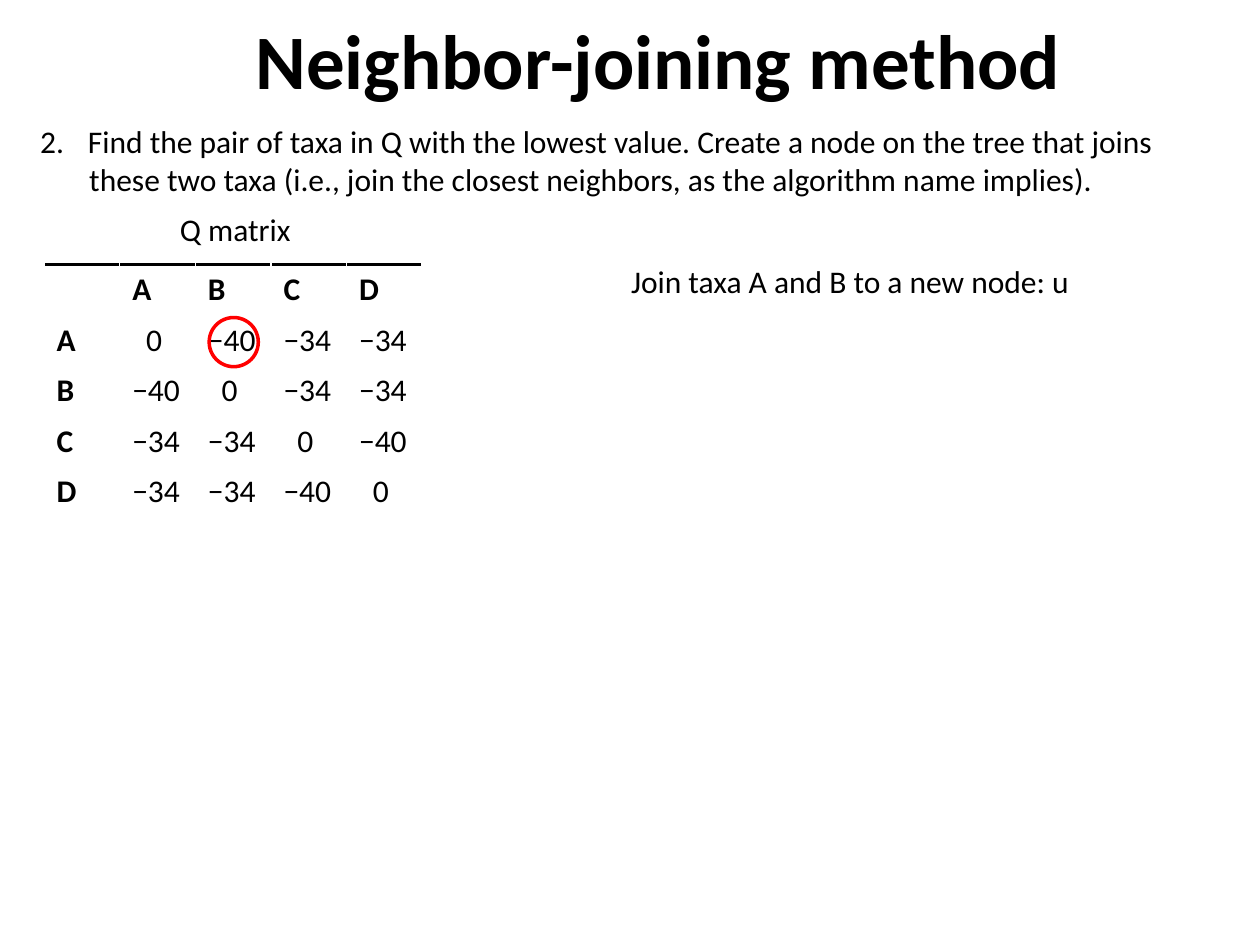
from dataclasses import dataclass

from lxml.etree import SubElement
from pptx import Presentation
from pptx.dml.color import RGBColor
from pptx.enum.shapes import MSO_SHAPE
from pptx.enum.text import MSO_ANCHOR, MSO_AUTO_SIZE
from pptx.oxml.ns import qn
from pptx.util import Inches, Pt

BLACK = RGBColor(0x00, 0x00, 0x00)
RED = RGBColor(0xFF, 0x00, 0x00)
FONT = "Calibri"

TAXA = ["A", "B", "C", "D"]
Q_MATRIX = [
    ["0", "−40", "−34", "−34"],
    ["−40", "0", "−34", "−34"],
    ["−34", "−34", "0", "−40"],
    ["−34", "−34", "−40", "0"],
]
COLUMN_WIDTH = 0.6
ROW_HEIGHT = 0.4
CELL_MARGIN = 0.1
ZERO_MARGIN = 0.21


@dataclass
class Label:
    lines: list[str]
    left: float
    top: float
    width: float
    height: float
    size: int = 18
    bold: bool = False
    wrap: bool = False


LABELS = [
    Label(["Q matrix"], 1.33, 1.62, 1.09, 0.4),
    Label(["Join taxa A and B to a new node: u"], 4.91, 2.03, 3.72, 0.4),
    Label(["Neighbor-joining method"], 1.93, 0.05, 6.67, 0.84, size=44, bold=True),
]
STEP = Label(
    [
        "Find the pair of taxa in Q with the lowest value. Create a node on the tree that joins",
        "these two taxa (i.e., join the closest neighbors, as the algorithm name implies).",
    ],
    0.22, 0.92, 9.67, 0.71, wrap=True,
)


def write(para, text: str, size: int = 18, bold: bool = False) -> None:
    span = para.add_run()
    span.text = text
    span.font.name = FONT
    span.font.size = Pt(size)
    span.font.bold = bold
    span.font.color.rgb = BLACK


def add_label(page, label: Label):
    box = page.shapes.add_textbox(
        Inches(label.left), Inches(label.top), Inches(label.width), Inches(label.height)
    )
    frame = box.text_frame
    frame.word_wrap = label.wrap
    frame.auto_size = MSO_AUTO_SIZE.SHAPE_TO_FIT_TEXT
    for index, line in enumerate(label.lines):
        para = frame.add_paragraph() if index else frame.paragraphs[0]
        write(para, line, size=label.size, bold=label.bold)
    return box


def add_step(page, label: Label, number: int) -> None:
    """Add a numbered step whose second line is aligned under the first."""
    first, second = add_label(page, label).text_frame.paragraphs
    properties = first._p.get_or_add_pPr()
    properties.set("marL", str(Inches(0.38)))
    properties.set("indent", str(-Inches(0.38)))
    SubElement(properties, qn("a:buFont"), typeface="+mj-lt")
    SubElement(properties, qn("a:buAutoNum"), type="arabicPeriod", startAt=str(number))
    second._p.get_or_add_pPr().set("marL", str(Inches(0.39)))


def add_top_border(cell) -> None:
    properties = cell._tc.get_or_add_tcPr()
    border = SubElement(properties, qn("a:lnT"), w=str(Pt(1.5)))
    fill = SubElement(border, qn("a:solidFill"))
    SubElement(fill, qn("a:srgbClr"), val=str(BLACK))


def add_matrix(page, left: float, top: float) -> None:
    rows = [["", *TAXA]] + [[taxon, *values] for taxon, values in zip(TAXA, Q_MATRIX)]
    count = len(rows)
    table = page.shapes.add_table(
        count, count, Inches(left), Inches(top),
        Inches(COLUMN_WIDTH * count), Inches(ROW_HEIGHT * count),
    ).table
    table.first_row = False
    table.horz_banding = False
    for row_index, row in enumerate(rows):
        for column_index, text in enumerate(row):
            cell = table.cell(row_index, column_index)
            cell.vertical_anchor = MSO_ANCHOR.MIDDLE
            cell.margin_left = Inches(ZERO_MARGIN if text == "0" else CELL_MARGIN)
            if row_index == 0:
                add_top_border(cell)
            cell.fill.background()
            if text:
                write(cell.text_frame.paragraphs[0], text, bold=text in TAXA)


def add_ring(page, left: float, top: float, diameter: float) -> None:
    ring = page.shapes.add_shape(
        MSO_SHAPE.OVAL, Inches(left), Inches(top), Inches(diameter), Inches(diameter)
    )
    ring.shadow.inherit = False
    ring.fill.background()
    ring.line.color.rgb = RED
    ring.line.width = Pt(2)


def main() -> None:
    deck = Presentation()
    deck.slide_width = Inches(10)
    deck.slide_height = Inches(7.5)
    page = deck.slides.add_slide(deck.slide_layouts[6])
    add_step(page, STEP, number=2)
    add_matrix(page, left=0.35, top=2.1)
    add_ring(page, left=1.66, top=2.52, diameter=0.39)
    for label in LABELS:
        add_label(page, label)
    deck.save("out.pptx")


if __name__ == "__main__":
    main()
